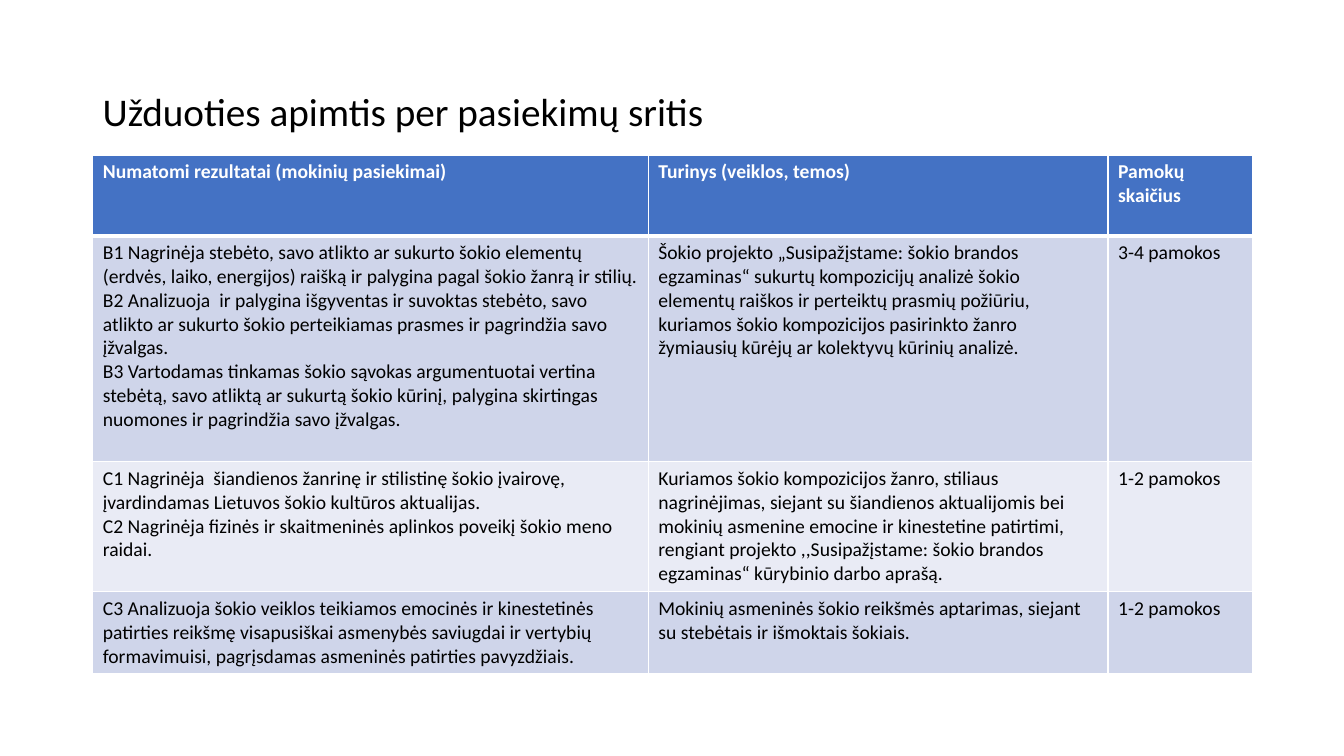
from dataclasses import dataclass

import lxml.etree
import pptx
import pptx.dml.color
import pptx.enum.text
import pptx.oxml.ns
import pptx.util

RGBColor = pptx.dml.color.RGBColor
BLACK = RGBColor(0x00, 0x00, 0x00)
WHITE = RGBColor(0xFF, 0xFF, 0xFF)
HEADER_BLUE = RGBColor(0x44, 0x72, 0xC4)
BAND_DARK = RGBColor(0xCF, 0xD5, 0xEA)
BAND_LIGHT = RGBColor(0xE9, 0xEB, 0xF5)
FONT = "Calibri"

# The slide is a grid of square steps, a hundred to the inch
GRID_COLUMNS, GRID_ROWS = 1333, 750
STEP = pptx.util.Inches(0.01)
LEFT, CONTENT_WIDTH = 92, 1150
TITLE_TOP, TITLE_HEIGHT = 40, 145
TABLE_TOP = 154
COLUMN_WIDTHS = (551, 456, 143)


@dataclass(frozen=True)
class TableRow:
    height: int
    fill: RGBColor
    cells: tuple[tuple[str, ...], ...]
    is_header: bool = False


ROWS = (
    TableRow(80, HEADER_BLUE, (
        ("Numatomi rezultatai (mokinių pasiekimai)",),
        ("Turinys (veiklos, temos)",),
        ("Pamokų skaičius",),
    ), is_header=True),
    TableRow(224, BAND_DARK, (
        ("B1 Nagrinėja stebėto, savo atlikto ar sukurto šokio elementų (erdvės, laiko, "
         "energijos) raišką ir palygina pagal šokio žanrą ir stilių.",
         "B2 Analizuoja  ir palygina išgyventas ir suvoktas stebėto, savo atlikto ar "
         "sukurto šokio perteikiamas prasmes ir pagrindžia savo įžvalgas.",
         "B3 Vartodamas tinkamas šokio sąvokas argumentuotai vertina stebėtą, savo atliktą "
         "ar sukurtą šokio kūrinį, palygina skirtingas nuomones ir pagrindžia savo įžvalgas."),
        ("Šokio projekto „Susipažįstame: šokio brandos egzaminas“ sukurtų kompozicijų analizė "
         "šokio elementų raiškos ir perteiktų prasmių požiūriu, kuriamos šokio kompozicijos "
         "pasirinkto žanro žymiausių kūrėjų ar kolektyvų kūrinių analizė.",),
        ("3-4 pamokos",),
    )),
    TableRow(129, BAND_LIGHT, (
        ("C1 Nagrinėja  šiandienos žanrinę ir stilistinę šokio įvairovę, įvardindamas "
         "Lietuvos šokio kultūros aktualijas.",
         "C2 Nagrinėja fizinės ir skaitmeninės aplinkos poveikį šokio meno raidai."),
        ("Kuriamos šokio kompozicijos žanro, stiliaus nagrinėjimas, siejant su šiandienos "
         "aktualijomis bei mokinių asmenine emocine ir kinestetine patirtimi, rengiant projekto "
         ",,Susipažįstame: šokio brandos egzaminas“ kūrybinio darbo aprašą.",),
        ("1-2 pamokos",),
    )),
    TableRow(81, BAND_DARK, (
        ("C3 Analizuoja šokio veiklos teikiamos emocinės ir kinestetinės patirties reikšmę "
         "visapusiškai asmenybės saviugdai ir vertybių formavimuisi, pagrįsdamas asmeninės "
         "patirties pavyzdžiais.",),
        ("Mokinių asmeninės šokio reikšmės aptarimas, siejant su stebėtais ir išmoktais šokiais.",),
        ("1-2 pamokos",),
    )),
)


def write_text(text_frame, lines: tuple[str, ...], *, size: int, color: RGBColor,
               bold: bool = False, line_spacing: float = 1.0) -> None:
    for index, line in enumerate(lines):
        paragraph = text_frame.paragraphs[0] if index == 0 else text_frame.add_paragraph()
        paragraph.line_spacing = line_spacing
        run = paragraph.add_run()
        run.text = line
        run.font.name = FONT
        run.font.size = pptx.util.Pt(size)
        run.font.bold = bold
        run.font.color.rgb = color


def set_borders(cell, *, top: int = 1, bottom: int = 1) -> None:
    properties = cell._tc.get_or_add_tcPr()
    for side, width in (("L", 1), ("R", 1), ("T", top), ("B", bottom)):
        line = lxml.etree.SubElement(properties, pptx.oxml.ns.qn(f"a:ln{side}"),
                                     w=str(pptx.util.Pt(width)))
        solid = lxml.etree.SubElement(line, pptx.oxml.ns.qn("a:solidFill"))
        lxml.etree.SubElement(solid, pptx.oxml.ns.qn("a:srgbClr"), val=str(WHITE))


def add_title(slide) -> None:
    title = slide.shapes.add_textbox(LEFT * STEP, TITLE_TOP * STEP,
                                     CONTENT_WIDTH * STEP, TITLE_HEIGHT * STEP)
    title.text_frame.word_wrap = True
    title.text_frame.vertical_anchor = pptx.enum.text.MSO_ANCHOR.MIDDLE
    write_text(title.text_frame, ("Užduoties apimtis per pasiekimų sritis",),
               size=28, color=BLACK, line_spacing=0.9)


def add_scope_table(slide) -> None:
    height = sum(row.height for row in ROWS)
    table = slide.shapes.add_table(len(ROWS), len(COLUMN_WIDTHS), LEFT * STEP, TABLE_TOP * STEP,
                                   CONTENT_WIDTH * STEP, height * STEP).table
    for column, width in zip(table.columns, COLUMN_WIDTHS):
        column.width = width * STEP
    for row_index, row in enumerate(ROWS):
        table.rows[row_index].height = row.height * STEP
        for column_index, lines in enumerate(row.cells):
            cell = table.cell(row_index, column_index)
            set_borders(cell, top=3 if row_index == 1 else 1, bottom=3 if row.is_header else 1)
            cell.fill.solid()
            cell.fill.fore_color.rgb = row.fill
            write_text(cell.text_frame, lines, size=14, bold=row.is_header,
                       color=WHITE if row.is_header else BLACK)


def main() -> None:
    presentation = pptx.Presentation()
    presentation.slide_width = GRID_COLUMNS * STEP
    presentation.slide_height = GRID_ROWS * STEP
    slide = presentation.slides.add_slide(presentation.slide_layouts[6])
    add_title(slide)
    add_scope_table(slide)
    presentation.save("out.pptx")


if __name__ == "__main__":
    main()
